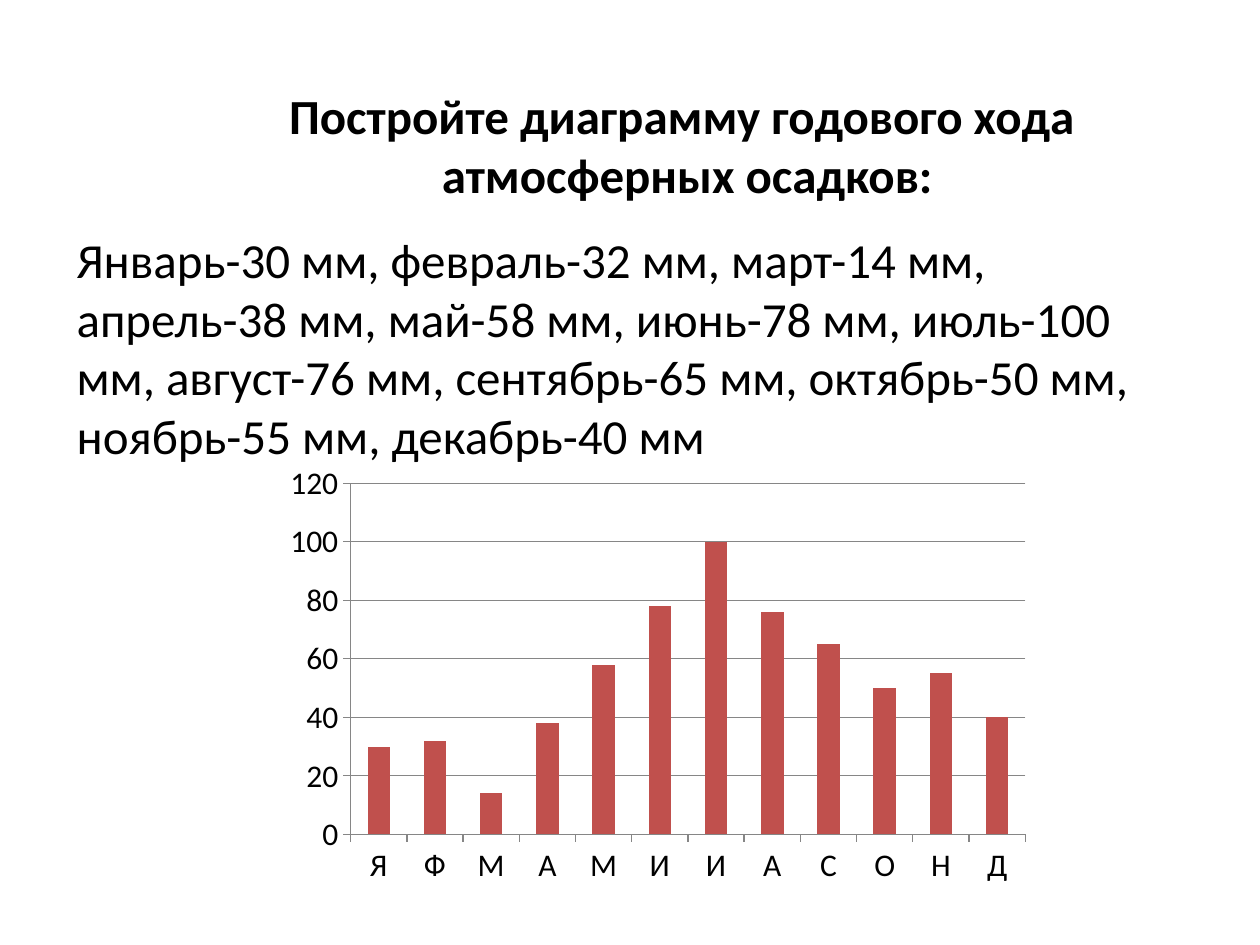
from dataclasses import dataclass

from lxml import etree
from pptx import Presentation
from pptx.chart.data import CategoryChartData
from pptx.dml.color import RGBColor
from pptx.enum.chart import XL_CHART_TYPE, XL_TICK_MARK
from pptx.enum.text import MSO_ANCHOR, PP_ALIGN
from pptx.oxml.ns import qn
from pptx.util import Inches, Pt

COLUMNS = XL_CHART_TYPE.COLUMN_CLUSTERED
TICK_OUTSIDE, TICK_NONE = XL_TICK_MARK.OUTSIDE, XL_TICK_MARK.NONE
MIDDLE, TOP = MSO_ANCHOR.MIDDLE, MSO_ANCHOR.TOP
CENTER, LEFT = PP_ALIGN.CENTER, PP_ALIGN.LEFT
TITLE_ONLY = 5


@dataclass(frozen=True)
class Theme:
    font: str = "Calibri"
    ink: RGBColor = RGBColor(0, 0, 0)
    bar: RGBColor = RGBColor(0xC0, 0x50, 0x4D)
    rule: RGBColor = RGBColor(0x86, 0x86, 0x86)
    text_size: int = 28
    chart_size: int = 18


THEME = Theme()
TITLE = "Постройте диаграмму годового хода\v атмосферных осадков:"
RAINFALL = {
    "Январь": 30, "февраль": 32, "март": 14, "апрель": 38,
    "май": 58, "июнь": 78, "июль": 100, "август": 76,
    "сентябрь": 65, "октябрь": 50, "ноябрь": 55, "декабрь": 40,
}


def format_font(font, size, bold=False):
    font.name = THEME.font
    font.size = Pt(size)
    font.bold = bold
    font.color.rgb = THEME.ink


def write_text(shape, text, size=THEME.text_size, bold=False, align=LEFT, anchor=TOP):
    frame = shape.text_frame
    frame.word_wrap = True
    frame.vertical_anchor = anchor
    paragraph = frame.paragraphs[0]
    paragraph.text = text
    paragraph.alignment = align
    paragraph.space_before = Pt(0)
    for run in paragraph.runs:
        format_font(run.font, size, bold)


def add_title(slide):
    title = slide.shapes.title
    title.left, title.top = Inches(0.91), Inches(0.52)
    title.width, title.height = Inches(9), Inches(1.25)
    write_text(title, TITLE, bold=True, align=CENTER, anchor=MIDDLE)


def add_rainfall_text(slide):
    box = slide.shapes.add_textbox(Inches(0.51), Inches(1.77), Inches(9), Inches(1.9))
    text = ", ".join(f"{month}-{amount} мм" for month, amount in RAINFALL.items())
    write_text(box, text)


def set_plot_layout(chart, **fractions):
    plot_area = chart.plots[0]._element.getparent()
    for old_layout in plot_area.findall(qn("c:layout")):
        plot_area.remove(old_layout)
    layout = etree.Element(qn("c:layout"))
    plot_area.insert(0, layout)
    manual = etree.SubElement(layout, qn("c:manualLayout"))
    settings = {"layoutTarget": "inner", "xMode": "edge", "yMode": "edge", **fractions}
    for name, value in settings.items():
        etree.SubElement(manual, qn(f"c:{name}")).set("val", str(value))


def format_axis(axis):
    axis.major_tick_mark = TICK_OUTSIDE
    axis.minor_tick_mark = TICK_NONE
    axis.format.line.color.rgb = THEME.rule


def add_rainfall_chart(slide):
    data = CategoryChartData()
    data.categories = [month[0].upper() for month in RAINFALL]
    data.add_series("Series 1", list(RAINFALL.values()))
    chart = slide.shapes.add_chart(
        COLUMNS, Inches(2.09), Inches(3.51), Inches(6.3), Inches(3.62), data
    ).chart
    chart.has_legend = False
    chart.has_title = False
    format_font(chart.font, THEME.chart_size)

    plot = chart.plots[0]
    plot.gap_width = 150
    plot.vary_by_categories = False
    fill = plot.series[0].format.fill
    fill.solid()
    fill.fore_color.rgb = THEME.bar

    format_axis(chart.category_axis)
    value_axis = chart.value_axis
    format_axis(value_axis)
    value_axis.minimum_scale, value_axis.maximum_scale = 0, 120
    value_axis.major_unit = 20
    value_axis.has_major_gridlines = True
    value_axis.major_gridlines.format.line.color.rgb = THEME.rule
    set_plot_layout(chart, x=0.11, y=0.09, w=0.85, h=0.77)


def main():
    presentation = Presentation()
    presentation.slide_width, presentation.slide_height = Inches(10), Inches(7.5)
    slide = presentation.slides.add_slide(presentation.slide_layouts[TITLE_ONLY])
    add_title(slide)
    add_rainfall_text(slide)
    add_rainfall_chart(slide)
    presentation.save("out.pptx")


if __name__ == "__main__":
    main()
